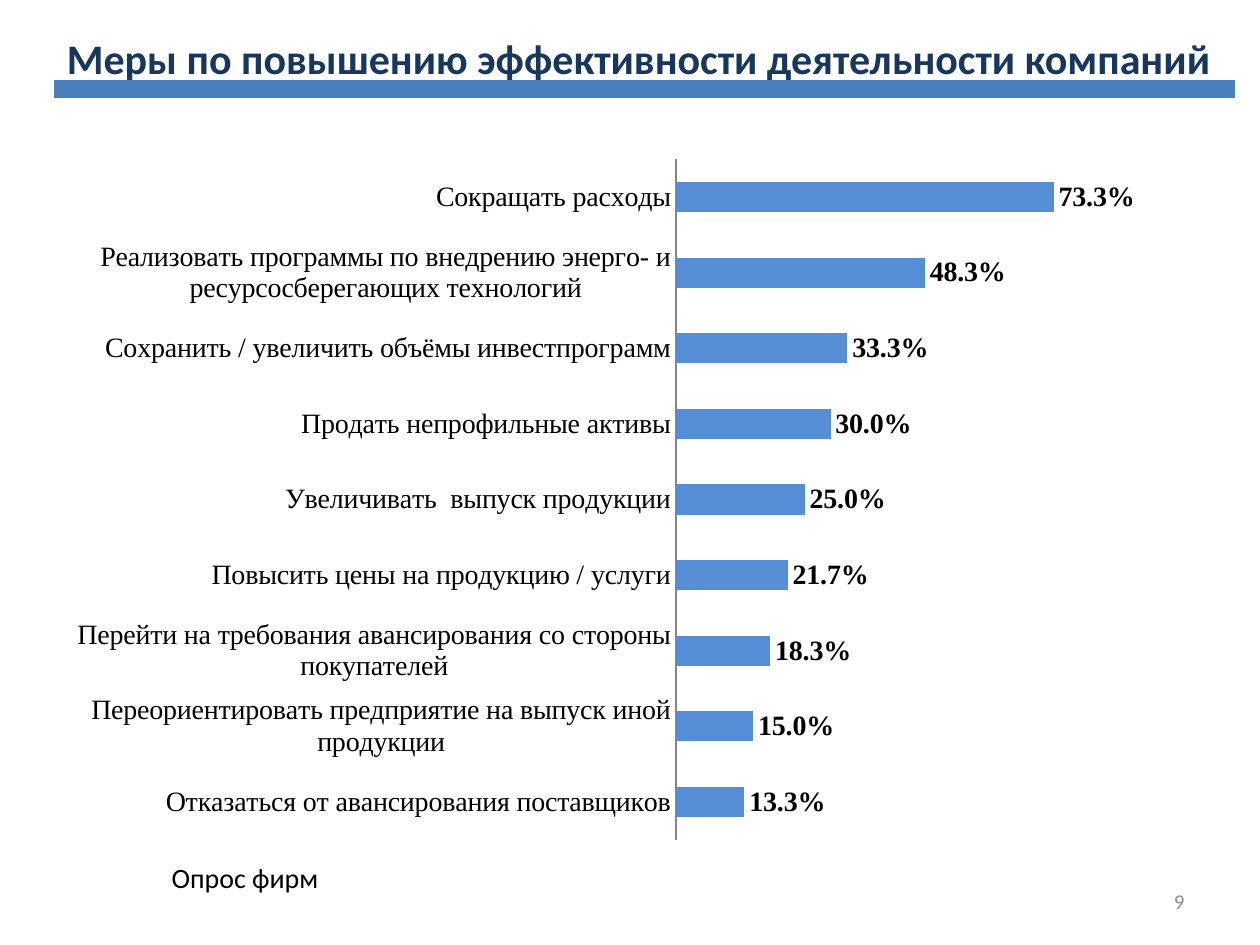
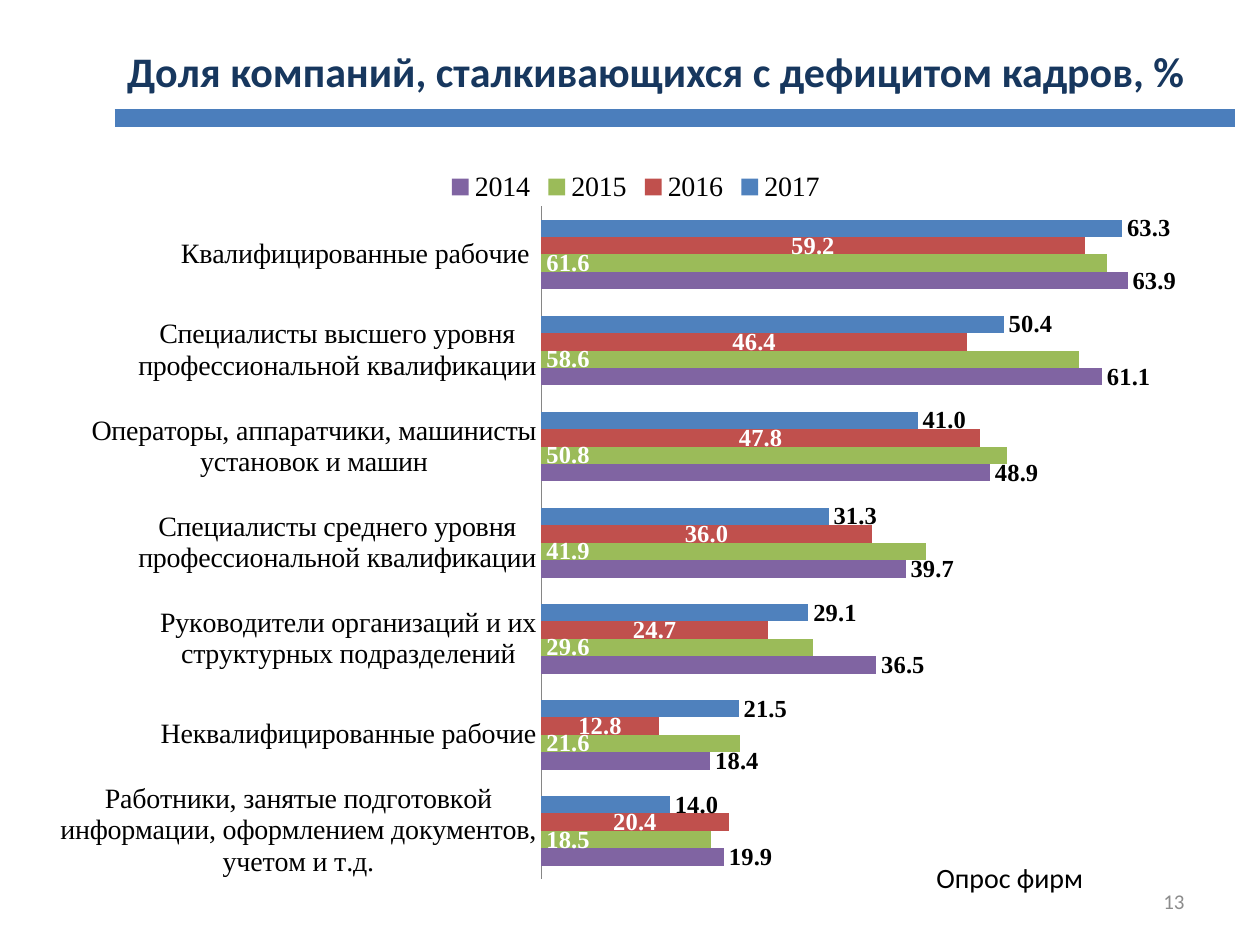
"""Builds two survey slides, each with a titled bar chart."""
from dataclasses import dataclass

from lxml import etree
from pptx import Presentation
from pptx import util as u
from pptx.chart import data as chart_data
from pptx.dml import color
from pptx.enum import chart as charts, shapes, text
from pptx.oxml import ns


@dataclass(frozen=True)
class Theme:
    title: str = "17375E"
    rule: str = "4B7EBC"
    number: str = "8C8C8C"
    ink: str = "000000"
    white: str = "FFFFFF"
    axis: str = "868686"
    light_blue: str = "558ED5"
    blue: str = "4F81BD"
    red: str = "C0504D"
    green: str = "9BBB59"
    purple: str = "8064A2"
    heading_font: str = "Calibri"
    chart_font: str = "Times New Roman"
    title_size: int = 24
    text_size: int = 16
    label_size: int = 14
    number_size: int = 12
    rule_width: int = 10


theme = Theme()
RGB = color.RGBColor.from_string
POSITION = charts.XL_LABEL_POSITION


def apply(target, **values):
    """Set each named attribute on the target."""
    for name, value in values.items():
        setattr(target, name, value)


def write(shape, box, words, size, ink, align, anchor, bold=False):
    """Place a text shape and fill it with one formatted paragraph."""
    left, top, width, height = map(u.Pt, box)
    apply(shape, left=left, top=top, width=width, height=height)
    frame = shape.text_frame
    apply(frame, text=words, word_wrap=True, vertical_anchor=anchor, auto_size=text.MSO_AUTO_SIZE.NONE)
    paragraph = frame.paragraphs[0]
    paragraph.alignment = align
    font = paragraph.runs[0].font
    apply(font, name=theme.heading_font, size=u.Pt(size), bold=bold)
    font.color.rgb = RGB(ink)


pages = [
    {
        "title": "Меры по повышению эффективности деятельности компаний",
        "title_box": (31, 15, 675, 36),
        "rule_top": 51,
        "note_left": 31,
        "number": "9",
        "chart_box": (31, 83, 663, 405),
        "plot": None,
        "value_axis": {"minimum_scale": 0, "maximum_scale": 1, "major_unit": 0.25},
        "format": "0.0%",
        "label_size": theme.text_size,
        "overlap": -25,
        "top_down": False,
        "categories": [
            "Отказаться от авансирования поставщиков",
            "Переориентировать предприятие на выпуск иной продукции",
            "Перейти на требования авансирования со стороны покупателей",
            "Повысить цены на продукцию / услуги",
            "Увеличивать  выпуск продукции",
            "Продать непрофильные активы",
            "Сохранить / увеличить объёмы инвестпрограмм",
            "Реализовать программы по внедрению энерго- и ресурсосберегающих технологий",
            "Сокращать расходы",
        ],
        "series": [
            ("Series 1", theme.light_blue, POSITION.OUTSIDE_END, theme.ink,
             [0.133, 0.15, 0.183, 0.217, 0.25, 0.3, 0.333, 0.483, 0.733]),
        ],
    },
    {
        "title": "Доля компаний, сталкивающихся с дефицитом кадров, %",
        "title_box": (65.5, 22.5, 629, 36),
        "rule_top": 67.5,
        "note_left": 468,
        "number": "13",
        "chart_box": (34.5, 89.5, 657, 425.5),
        "plot": {"x": 0.418, "y": 0.067, "w": 0.559, "h": 0.903},
        "value_axis": {"minimum_scale": 0, "maximum_scale": 70},
        "format": "0.0",
        "label_size": theme.label_size,
        "overlap": 0,
        "top_down": True,
        "categories": [
            "Квалифицированные рабочие ",
            "Специалисты высшего уровня профессиональной квалификации",
            "Операторы, аппаратчики, машинисты установок и машин",
            "Специалисты среднего уровня профессиональной квалификации",
            "Руководители организаций и их структурных подразделений",
            "Неквалифицированные рабочие",
            "Работники, занятые подготовкой информации, оформлением документов, учетом и т.д.",
        ],
        "series": [
            ("2017", theme.blue, POSITION.OUTSIDE_END, theme.ink, [63.3, 50.4, 41, 31.3, 29.1, 21.5, 14]),
            ("2016", theme.red, POSITION.CENTER, theme.white, [59.2, 46.4, 47.8, 36, 24.7, 12.8, 20.4]),
            ("2015", theme.green, POSITION.INSIDE_BASE, theme.white, [61.6, 58.6, 50.8, 41.9, 29.6, 21.6, 18.5]),
            ("2014", theme.purple, POSITION.OUTSIDE_END, theme.ink, [63.9, 61.1, 48.9, 39.7, 36.5, 18.4, 19.9]),
        ],
    },
]

presentation = Presentation()
apply(presentation, slide_width=u.Pt(720), slide_height=u.Pt(540))

for page in pages:
    slide = presentation.slides.add_slide(presentation.slide_layouts[5])
    write(slide.shapes.title, page["title_box"], page["title"], theme.title_size, theme.title,
          text.PP_ALIGN.LEFT, text.MSO_ANCHOR.TOP, bold=True)

    figures = chart_data.CategoryChartData(number_format=page["format"])
    figures.categories = page["categories"]
    for name, fill, position, ink, values in page["series"]:
        figures.add_series(name, values)
    chart = slide.shapes.add_chart(
        charts.XL_CHART_TYPE.BAR_CLUSTERED, *map(u.Pt, page["chart_box"]), figures).chart
    apply(chart, has_title=False, has_legend=len(page["series"]) > 1)
    apply(chart.font, name=theme.chart_font, size=u.Pt(theme.text_size))
    chart.font.color.rgb = RGB(theme.ink)
    if chart.has_legend:
        apply(chart.legend, position=charts.XL_LEGEND_POSITION.TOP, include_in_layout=False)
        chart.legend.font.size = u.Pt(theme.text_size)

    apply(chart.value_axis, visible=False, has_major_gridlines=False, **page["value_axis"])
    apply(chart.category_axis, major_tick_mark=charts.XL_TICK_MARK.NONE,
          minor_tick_mark=charts.XL_TICK_MARK.NONE, reverse_order=page["top_down"])
    chart.category_axis.tick_labels.font.size = u.Pt(theme.text_size)
    chart.category_axis.format.line.color.rgb = RGB(theme.axis)

    plot = chart.plots[0]
    apply(plot, gap_width=150, overlap=page["overlap"], vary_by_categories=False)
    for series, (name, fill, position, ink, values) in zip(plot.series, page["series"]):
        series.format.fill.solid()
        series.format.fill.fore_color.rgb = RGB(fill)
        series.invert_if_negative = False
        labels = series.data_labels
        apply(labels, show_value=True, position=position,
              number_format=page["format"], number_format_is_linked=False)
        apply(labels.font, size=u.Pt(page["label_size"]), bold=True)
        labels.font.color.rgb = RGB(ink)

    if page["plot"]:
        area = chart.element.find(".//" + ns.qn("c:plotArea"))
        for old_layout in area.findall(ns.qn("c:layout")):
            area.remove(old_layout)
        layout = etree.Element(ns.qn("c:layout"))
        manual = etree.SubElement(layout, ns.qn("c:manualLayout"))
        settings = {"layoutTarget": "inner", "xMode": "edge", "yMode": "edge", **page["plot"]}
        for tag, value in settings.items():
            etree.SubElement(manual, ns.qn("c:" + tag)).set("val", str(value))
        area.insert(0, layout)

    rule_top = u.Pt(page["rule_top"])
    rule = slide.shapes.add_connector(
        shapes.MSO_CONNECTOR.STRAIGHT, u.Pt(page["title_box"][0]), rule_top, u.Pt(706), rule_top)
    rule.line.width = u.Pt(theme.rule_width)
    rule.line.color.rgb = RGB(theme.rule)
    etree.SubElement(rule.element.spPr, ns.qn("a:effectLst"))

    footers = [
        ((page["note_left"], 488, 158, 27), "Опрос фирм", theme.text_size, theme.ink, text.MSO_ANCHOR.TOP),
        ((516, 500.5, 168, 29), page["number"], theme.number_size, theme.number, text.MSO_ANCHOR.MIDDLE),
    ]
    for box, words, size, ink, anchor in footers:
        write(slide.shapes.add_textbox(0, 0, 0, 0), box, words, size, ink, text.PP_ALIGN.RIGHT, anchor)

presentation.save("out.pptx")
